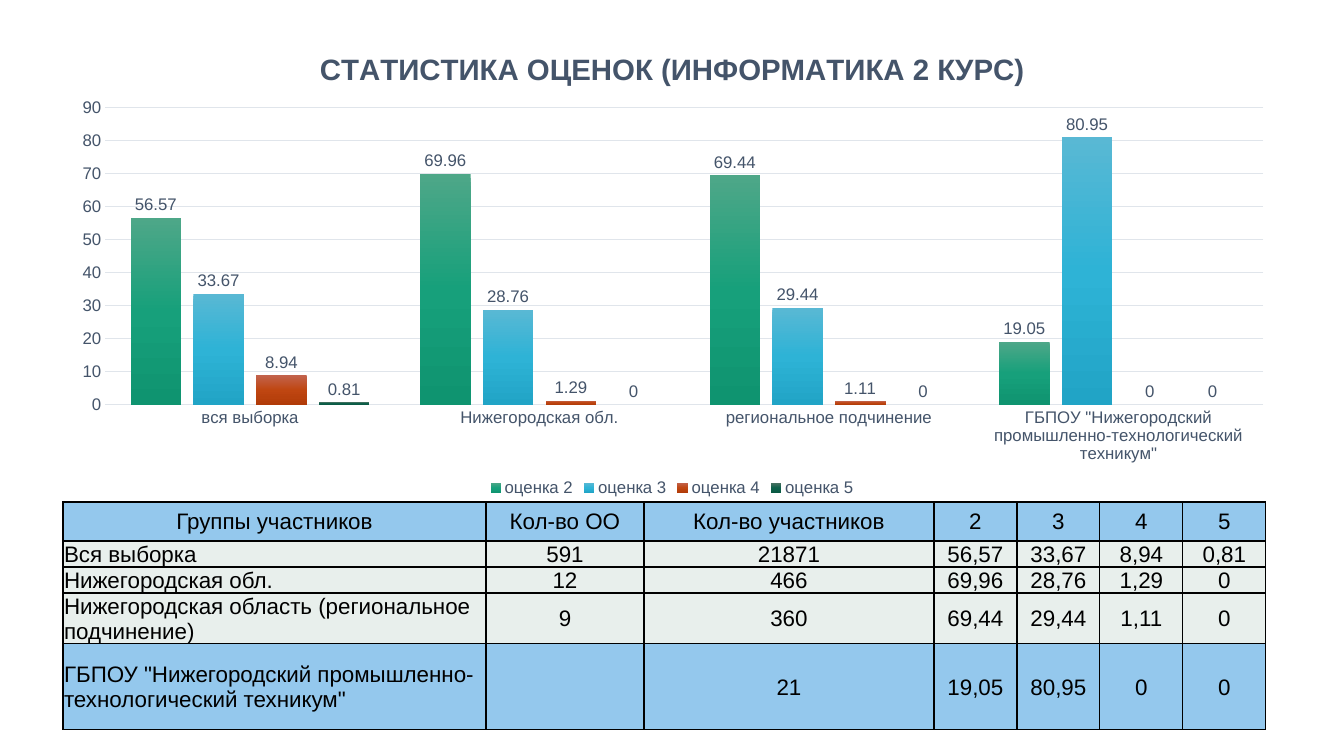
from dataclasses import dataclass

from pptx import Presentation
from pptx.chart.chart import Chart
from pptx.chart.data import CategoryChartData
from pptx.dml.color import RGBColor
from pptx.enum.chart import XL_CHART_TYPE, XL_LABEL_POSITION, XL_LEGEND_POSITION, XL_TICK_MARK
from pptx.enum.text import MSO_ANCHOR, PP_ALIGN
from pptx.oxml import parse_xml
from pptx.oxml.ns import nsdecls, qn
from pptx.slide import Slide
from pptx.table import _Cell
from pptx.util import Emu, Pt

CLUSTERED = XL_CHART_TYPE.COLUMN_CLUSTERED
OUTSIDE_END = XL_LABEL_POSITION.OUTSIDE_END
BOTTOM = XL_LEGEND_POSITION.BOTTOM
NO_TICK = XL_TICK_MARK.NONE
MIDDLE = MSO_ANCHOR.MIDDLE
LEFT, CENTER = PP_ALIGN.LEFT, PP_ALIGN.CENTER

PX = 914400 / 100.8
FONT = "Arial"
COLORS = {
    "text": "000000",
    "chart_text": "44546A",
    "grid": "E0E5EB",
    "accent_row": "94C8ED",
    "plain_row": "E8EFEC",
    "border": "000000",
}


@dataclass
class Grade:
    name: str
    shares: tuple[float, ...]
    gradient: tuple[str, str, str]


@dataclass
class Group:
    cells: tuple[str, ...]
    height: int
    fill: str = "plain_row"


TITLE = "СТАТИСТИКА ОЦЕНОК (ИНФОРМАТИКА 2 КУРС)"
CATEGORIES = (
    "вся выборка",
    "Нижегородская обл.",
    "региональное подчинение",
    'ГБПОУ "Нижегородский промышленно-технологический техникум"',
)
GRADES = (
    Grade("оценка 2", (56.57, 69.96, 69.44, 19.05), ("4EA788", "17A07B", "0F9470")),
    Grade("оценка 3", (33.67, 28.76, 29.44, 80.95), ("59B8D4", "2EB3D6", "21A4C6")),
    Grade("оценка 4", (8.94, 1.29, 1.11, 0), ("C2634D", "BF4611", "B13B08")),
    Grade("оценка 5", (0.81, 0, 0, 0), ("4C7263", "0E604A", "095943")),
)
COLUMN_WIDTHS = (423, 158, 290, 83, 83, 83, 83)
GROUPS = (
    Group(("Группы участников", "Кол-во ОО", "Кол-во участников", "2", "3", "4", "5"), 39, "accent_row"),
    Group(("Вся выборка", "591", "21871", "56,57", "33,67", "8,94", "0,81"), 26),
    Group(("Нижегородская обл.", "12", "466", "69,96", "28,76", "1,29", "0"), 26),
    Group(("Нижегородская область (региональное подчинение)", "9", "360", "69,44", "29,44", "1,11", "0"), 50),
    Group((CATEGORIES[3], "", "21", "19,05", "80,95", "0", "0"), 86, "accent_row"),
)


def px(length: int) -> Emu:
    return Emu(round(length * PX))


def rgb(name: str) -> RGBColor:
    return RGBColor.from_string(COLORS[name])


def style_font(font, size: int, color: str, bold: bool = False) -> None:
    font.name = FONT
    font.size = Pt(size)
    font.bold = bold
    font.color.rgb = rgb(color)


def style_line(line, color: str) -> None:
    line.color.rgb = rgb(color)
    line.width = Pt(0.75)


def fill_gradient(series, colors: tuple[str, str, str]) -> None:
    stops = "".join(
        f'<a:gs pos="{i * 50000}"><a:srgbClr val="{color}"/></a:gs>' for i, color in enumerate(colors)
    )
    series._element.get_or_add_spPr().insert(0, parse_xml(
        f'<a:gradFill {nsdecls("a")} rotWithShape="1"><a:gsLst>{stops}</a:gsLst>'
        '<a:lin ang="5400000" scaled="0"/></a:gradFill>'
    ))


def set_layout(parent, index: int, target: str = "", **fractions: float) -> None:
    for previous in parent.findall(qn("c:layout")):
        parent.remove(previous)
    inner = f'<c:layoutTarget val="{target}"/>' if target else ""
    modes = "".join(f'<c:{key}Mode val="edge"/>' for key in ("x", "y"))
    values = "".join(f'<c:{key} val="{value}"/>' for key, value in fractions.items())
    parent.insert(index, parse_xml(
        f'<c:layout {nsdecls("c")}><c:manualLayout>{inner}{modes}{values}</c:manualLayout></c:layout>'
    ))


def style_axes(chart: Chart) -> None:
    for axis in (chart.category_axis, chart.value_axis):
        axis.major_tick_mark = axis.minor_tick_mark = NO_TICK
        style_font(axis.tick_labels.font, 12, "chart_text")
    style_line(chart.category_axis.format.line, "grid")
    shares = chart.value_axis
    shares.minimum_scale, shares.maximum_scale, shares.major_unit = 0, 90, 10
    shares.format.line.fill.background()
    style_line(shares.major_gridlines.format.line, "grid")


def add_grade_chart(slide: Slide) -> None:
    data = CategoryChartData()
    data.categories = CATEGORIES
    for grade in GRADES:
        data.add_series(grade.name, grade.shares)
    chart = slide.shapes.add_chart(CLUSTERED, px(56), px(21), px(1232), px(480), data).chart
    style_font(chart.font, 10, "text")

    chart.has_title = True
    heading = chart.chart_title.text_frame.paragraphs[0]
    heading.text = TITLE
    style_font(heading.font, 21, "chart_text", bold=True)
    set_layout(chart.chart_title._element, 1, x=0.21, y=0.05)
    set_layout(chart._chartSpace.chart.plotArea, 0, "inner", x=0.04, y=0.18, w=0.94, h=0.62)

    style_axes(chart)
    chart.has_legend = True
    chart.legend.position = BOTTOM
    chart.legend.include_in_layout = False
    style_font(chart.legend.font, 12, "chart_text")

    plot = chart.plots[0]
    plot.gap_width, plot.overlap = 100, -24
    plot.vary_by_categories = False
    for series, grade in zip(plot.series, GRADES):
        fill_gradient(series, grade.gradient)
        labels = series.data_labels
        labels.show_value = True
        labels.position = OUTSIDE_END
        style_font(labels.font, 12, "chart_text")


def add_borders(cell: _Cell) -> None:
    properties = cell._tc.get_or_add_tcPr()
    for index, side in enumerate(("lnL", "lnR", "lnT", "lnB")):
        properties.insert(index, parse_xml(
            f'<a:{side} {nsdecls("a")} w="12700"><a:solidFill>'
            f'<a:srgbClr val="{COLORS["border"]}"/></a:solidFill></a:{side}>'
        ))


def fill_cell(cell: _Cell, text: str, fill: str, alignment: PP_ALIGN) -> None:
    cell.fill.solid()
    cell.fill.fore_color.rgb = rgb(fill)
    cell.vertical_anchor = MIDDLE
    cell.margin_left = cell.margin_right = cell.margin_top = px(1)
    cell.margin_bottom = 0
    paragraph = cell.text_frame.paragraphs[0]
    paragraph.text = text
    paragraph.alignment = alignment
    style_font(paragraph.font, 16, "text")
    add_borders(cell)


def add_group_table(slide: Slide) -> None:
    width, height = sum(COLUMN_WIDTHS), sum(group.height for group in GROUPS)
    table = slide.shapes.add_table(
        len(GROUPS), len(COLUMN_WIDTHS), px(63), px(502), px(width), px(height)
    ).table
    table.first_row = table.horz_banding = False
    for column, column_width in zip(table.columns, COLUMN_WIDTHS):
        column.width = px(column_width)
    for row_index, (row, group) in enumerate(zip(table.rows, GROUPS)):
        row.height = px(group.height)
        for column_index, text in enumerate(group.cells):
            alignment = LEFT if row_index and not column_index else CENTER
            fill_cell(table.cell(row_index, column_index), text, group.fill, alignment)


def main() -> None:
    presentation = Presentation()
    presentation.slide_width, presentation.slide_height = px(1344), px(756)
    slide = presentation.slides.add_slide(presentation.slide_layouts[6])
    add_grade_chart(slide)
    add_group_table(slide)
    presentation.save("out.pptx")


if __name__ == "__main__":
    main()
